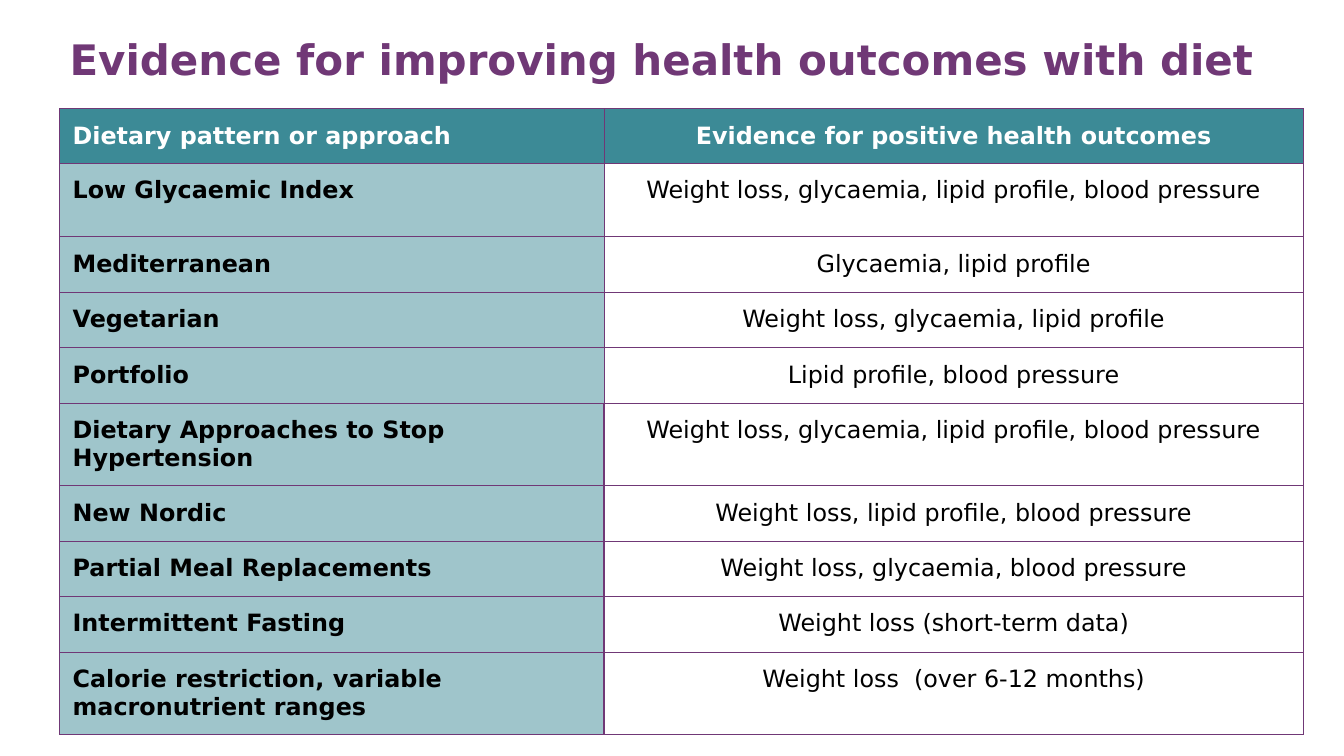
from dataclasses import dataclass

from lxml.etree import SubElement
from pptx import Presentation
from pptx.dml.color import RGBColor
from pptx.enum.text import MSO_ANCHOR as Anchor, PP_ALIGN as Align
from pptx.oxml.ns import qn
from pptx.util import Inches, Pt

PURPLE, TEAL, WHITE, BLACK = "703876", "3C8A96", "FFFFFF", "000000"
THIN, THICK = 0.75, 1
HEADINGS = ("Dietary pattern or approach", "Evidence for positive health outcomes")
DIETS = [
    ("Low Glycaemic Index", "Weight loss, glycaemia, lipid profile, blood pressure"),
    ("Mediterranean", "Glycaemia, lipid profile"),
    ("Vegetarian", "Weight loss, glycaemia, lipid profile"),
    ("Portfolio", "Lipid profile, blood pressure"),
    ("Dietary Approaches to Stop Hypertension",
     "Weight loss, glycaemia, lipid profile, blood pressure"),
    ("New Nordic", "Weight loss, lipid profile, blood pressure"),
    ("Partial Meal Replacements", "Weight loss, glycaemia, blood pressure"),
    ("Intermittent Fasting", "Weight loss (short-term data)"),
    ("Calorie restriction, variable macronutrient ranges",
     "Weight loss  (over 6-12 months)"),
]
COLUMN_WIDTHS = (5.4, 6.94)
HEADER_HEIGHT, ONE_LINE, SPACED_LINE, TWO_LINES = 0.54, 0.55, 0.73, 0.82
ROW_HEIGHTS = [HEADER_HEIGHT, SPACED_LINE, *[ONE_LINE] * 3, TWO_LINES,
               *[ONE_LINE] * 3, TWO_LINES]
FIRST_THICK_ROW = 5


def colour(value):
    return RGBColor.from_string(value)


@dataclass
class DietSlide:
    """Hold the slide and its font, and draw the title and the diet table."""

    slide: object
    font: str = "DejaVu Sans"

    def add_text(self, paragraph, text, size, text_colour, bold):
        run = paragraph.add_run()
        run.text = text
        run.font.name = self.font
        run.font.size = Pt(size)
        run.font.bold = bold
        run.font.color.rgb = colour(text_colour)

    def title(self, text, left, top, width, height):
        shape = self.slide.shapes.title
        shape.left, shape.top = Inches(left), Inches(top)
        shape.width, shape.height = Inches(width), Inches(height)
        frame = shape.text_frame
        frame.word_wrap = True
        frame.vertical_anchor = Anchor.MIDDLE
        paragraph = frame.paragraphs[0]
        paragraph.alignment = Align.LEFT
        paragraph.line_spacing = 0.9
        self.add_text(paragraph, text, 30, PURPLE, True)

    def borders(self, cell, widths):
        properties = cell._tc.get_or_add_tcPr()
        for side, width in zip("LRTB", widths):
            line = SubElement(properties, qn(f"a:ln{side}"), w=str(Pt(width)))
            fill = SubElement(line, qn("a:solidFill"))
            SubElement(fill, qn("a:srgbClr"), val=PURPLE)

    def fill(self, cell, value, opacity=100):
        cell.fill.solid()
        cell.fill.fore_color.rgb = colour(value)
        if opacity < 100:
            shade = cell._tc.tcPr.find(qn("a:solidFill")).find(qn("a:srgbClr"))
            SubElement(shade, qn("a:alpha"), val=str(opacity * 1000))

    def cell(self, cell, text, row, column):
        header, pattern = row == 0, column == 0
        cell.margin_left = cell.margin_right = Inches(0.13)
        cell.margin_top = cell.margin_bottom = Inches(0.13)
        thick = row >= FIRST_THICK_ROW
        outcome = THICK if thick and not pattern else THIN
        right = THICK if thick else THIN
        bottom = THICK if row >= FIRST_THICK_ROW - 1 and not pattern else THIN
        self.borders(cell, (outcome, right, outcome, bottom))
        if header:
            self.fill(cell, TEAL)
        elif pattern:
            self.fill(cell, TEAL, 49)
        else:
            cell.fill.background()
        paragraph = cell.text_frame.paragraphs[0]
        paragraph.alignment = Align.LEFT if pattern else Align.CENTER
        self.add_text(paragraph, text, 17, WHITE if header else BLACK,
                      header or pattern)

    def table(self, rows, left, top):
        frame = self.slide.shapes.add_table(
            len(rows), len(COLUMN_WIDTHS), Inches(left), Inches(top),
            Inches(sum(COLUMN_WIDTHS)), Inches(sum(ROW_HEIGHTS)))
        table = frame.table
        table.horz_banding = False
        for column, width in zip(table.columns, COLUMN_WIDTHS):
            column.width = Inches(width)
        for row, height in zip(table.rows, ROW_HEIGHTS):
            row.height = Inches(height)
        for row, texts in enumerate(rows):
            for column, text in enumerate(texts):
                self.cell(table.cell(row, column), text, row, column)


def main():
    presentation = Presentation()
    presentation.slide_width = Inches(13.33)
    presentation.slide_height = Inches(7.5)
    title_only = presentation.slide_layouts[5]
    diet_slide = DietSlide(presentation.slides.add_slide(title_only))
    diet_slide.title("Evidence for improving health outcomes with diet",
                     0.59, 0.2, 12.42, 0.83)
    diet_slide.table([HEADINGS, *DIETS], 0.59, 1.08)
    presentation.save("out.pptx")


if __name__ == "__main__":
    main()
